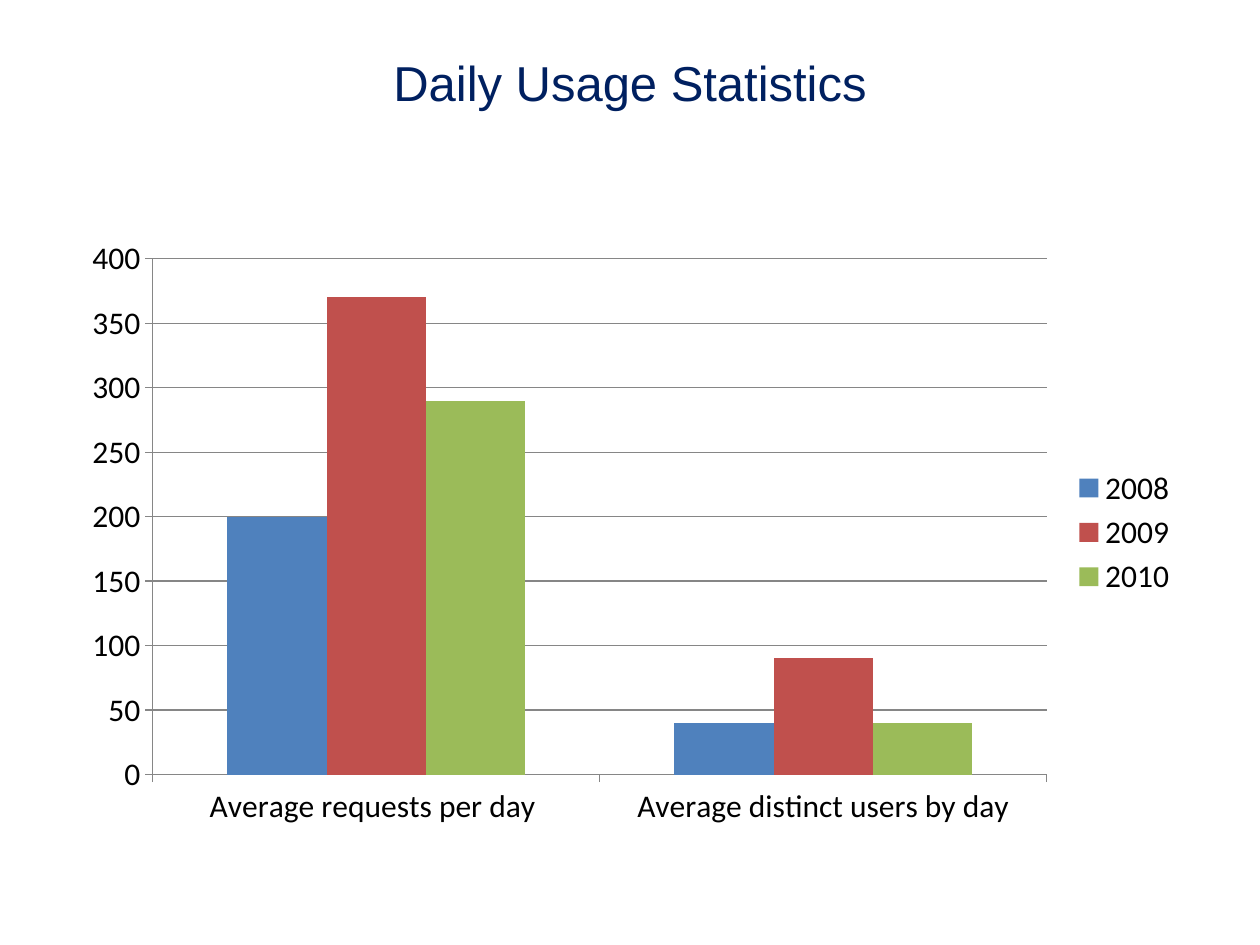
from dataclasses import dataclass

import pptx
import pptx.chart.data
import pptx.dml.color
import pptx.enum.chart
import pptx.enum.text
import pptx.util

Pt = pptx.util.Pt
HUES = {
    "title": "002060",
    "text": "000000",
    "line": "868686",
    "blue": "4F81BD",
    "red": "C0504D",
    "green": "9BBB59",
}
GROUPS = ["Average requests per day ", "Average distinct users by day"]


@dataclass(frozen=True)
class Year:
    name: str
    counts: tuple[int, int]
    hue: str


YEARS = [
    Year("2008", (200, 40), "blue"),
    Year("2009", (370, 90), "red"),
    Year("2010", (290, 40), "green"),
]


def shade(name: str) -> pptx.dml.color.RGBColor:
    return pptx.dml.color.RGBColor.from_string(HUES[name])


def add_title(slide, text: str) -> None:
    box = slide.shapes.add_textbox(Pt(36), Pt(21.6), Pt(648), Pt(50.4))
    frame = box.text_frame
    frame.word_wrap = True
    frame.vertical_anchor = pptx.enum.text.MSO_ANCHOR.MIDDLE
    frame.text = text
    line = frame.paragraphs[0]
    line.alignment = pptx.enum.text.PP_ALIGN.CENTER
    font = line.runs[0].font
    font.name, font.size = "Arial", Pt(28)
    font.color.rgb = shade("title")


def style_line(line) -> None:
    line.color.rgb = shade("line")
    line.width = Pt(0.75)


def add_usage(slide, years: list[Year]) -> None:
    data = pptx.chart.data.CategoryChartData()
    data.categories = GROUPS
    for year in years:
        data.add_series(year.name, year.counts)
    kind = pptx.enum.chart.XL_CHART_TYPE.COLUMN_CLUSTERED
    chart = slide.shapes.add_chart(
        kind, Pt(40), Pt(130), Pt(640), Pt(348.5), data
    ).chart
    chart.has_title = False
    chart.font.name, chart.font.size = "Calibri", Pt(18)
    chart.font.color.rgb = shade("text")
    chart.has_legend = True
    chart.legend.position = pptx.enum.chart.XL_LEGEND_POSITION.RIGHT
    chart.legend.include_in_layout = False

    plot = chart.plots[0]
    plot.gap_width, plot.overlap = 150, 0
    plot.vary_by_categories = False
    for bars, year in zip(plot.series, years):
        bars.format.fill.solid()
        bars.format.fill.fore_color.rgb = shade(year.hue)

    for axis in (chart.category_axis, chart.value_axis):
        axis.major_tick_mark = pptx.enum.chart.XL_TICK_MARK.OUTSIDE
        axis.minor_tick_mark = pptx.enum.chart.XL_TICK_MARK.NONE
        style_line(axis.format.line)
    scale = chart.value_axis
    scale.minimum_scale, scale.maximum_scale, scale.major_unit = 0, 400, 50
    scale.has_major_gridlines = True
    style_line(scale.major_gridlines.format.line)


def main() -> None:
    deck = pptx.Presentation()
    deck.slide_width, deck.slide_height = Pt(720), Pt(540)
    slide = deck.slides.add_slide(deck.slide_layouts[6])
    add_title(slide, "Daily Usage Statistics")
    add_usage(slide, YEARS)
    deck.save("out.pptx")


if __name__ == "__main__":
    main()
